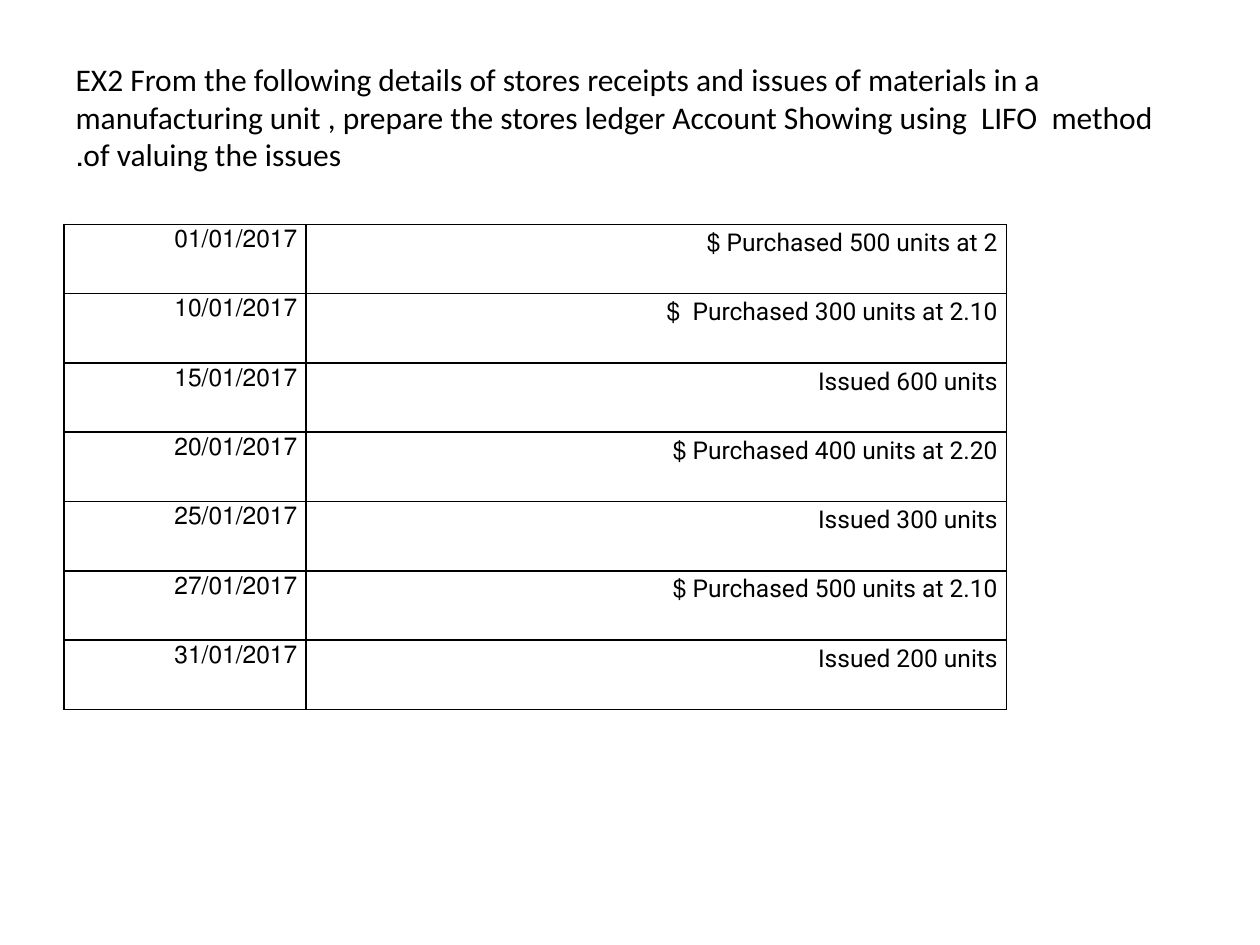
from lxml import etree
from pptx import Presentation
from pptx.dml.color import RGBColor
from pptx.enum.text import MSO_ANCHOR, PP_ALIGN
from pptx.oxml.ns import qn
from pptx.util import Inches, Pt

LEFT, RIGHT = PP_ALIGN.LEFT, PP_ALIGN.RIGHT
MIDDLE, TOP = MSO_ANCHOR.MIDDLE, MSO_ANCHOR.TOP
TITLE_ONLY = 5

QUESTION = (
    "EX2 From the following details of stores receipts and issues of materials "
    "in a manufacturing unit , prepare the stores ledger Account Showing using  "
    "LIFO  method of valuing the issues."
)
TRANSACTIONS = [
    ("01/01/2017", "Purchased 500 units at 2 $"),
    ("10/01/2017", "Purchased 300 units at 2.10  $"),
    ("15/01/2017", "Issued 600 units"),
    ("20/01/2017", "Purchased 400 units at 2.20 $ "),
    ("25/01/2017", "Issued 300 units"),
    ("27/01/2017", "Purchased 500 units at 2.10 $ "),
    ("31/01/2017", "Issued 200 units"),
]


def color(value):
    return RGBColor.from_string(value)


class LedgerSlide:
    """Holds the style and the current slide, and adds its elements."""

    ink = "000000"
    title_font, title_size = "Calibri", 18
    table_font, table_size = "Roboto", 14
    border_width = 1
    row_height = 0.55

    def __init__(self, deck):
        self.slide = deck.slides.add_slide(deck.slide_layouts[TITLE_ONLY])

    def add_text(self, paragraph, text, font, size, align):
        paragraph.alignment = align
        paragraph._p.get_or_add_pPr().set("rtl", "1")
        run = paragraph.add_run()
        run.text = text
        run.font.name = font
        run.font.size = Pt(size)
        run.font.color.rgb = color(self.ink)

    def title(self, text, left, top, width, height):
        heading = self.slide.shapes.title
        heading.left, heading.top = Inches(left), Inches(top)
        heading.width, heading.height = Inches(width), Inches(height)
        frame = heading.text_frame
        frame.vertical_anchor = MIDDLE
        self.add_text(frame.paragraphs[0], text, self.title_font, self.title_size, LEFT)

    def border(self, cell):
        properties = cell._tc.get_or_add_tcPr()
        for position, side in enumerate(("lnL", "lnR", "lnT", "lnB")):
            line = etree.Element(qn(f"a:{side}"), w=str(Pt(self.border_width)))
            fill = etree.SubElement(line, qn("a:solidFill"))
            etree.SubElement(fill, qn("a:srgbClr"), val=self.ink)
            properties.insert(position, line)

    def fill_cell(self, cell, text):
        cell.fill.background()
        cell.vertical_anchor = TOP
        cell.margin_left = cell.margin_right = Inches(0.07)
        cell.margin_top = cell.margin_bottom = 0
        entry = cell.text_frame.paragraphs[0]
        entry.line_spacing = 1.15
        entry.space_after = Pt(10)
        self.add_text(entry, text, self.table_font, self.table_size, RIGHT)
        self.border(cell)

    def table(self, rows, left, top, widths):
        height = self.row_height * len(rows)
        ledger = self.slide.shapes.add_table(
            len(rows), len(widths), Inches(left), Inches(top),
            Inches(sum(widths)), Inches(height),
        ).table
        ledger.first_row = ledger.horz_banding = False
        for column, width in zip(ledger.columns, widths):
            column.width = Inches(width)
        for row, texts in zip(ledger.rows, rows):
            row.height = Inches(self.row_height)
            for cell, text in zip(row.cells, texts):
                self.fill_cell(cell, text)


def main():
    deck = Presentation()
    deck.slide_width, deck.slide_height = Inches(10), Inches(7.5)
    exercise = LedgerSlide(deck)
    exercise.title(QUESTION, 0.5, 0.3, 9, 1.25)
    exercise.table(TRANSACTIONS, 0.51, 1.78, (1.92, 5.56))
    deck.save("out.pptx")


if __name__ == "__main__":
    main()
